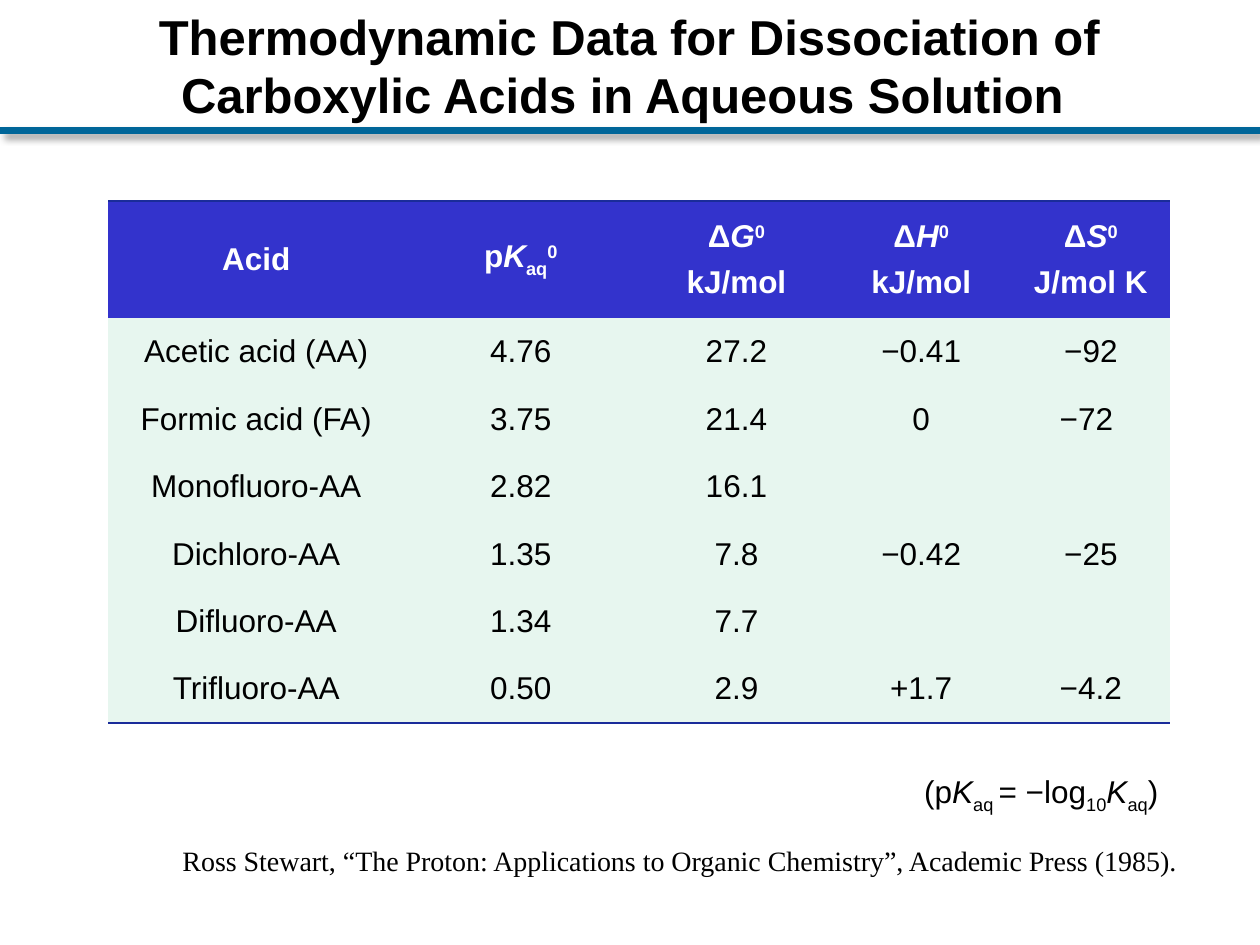
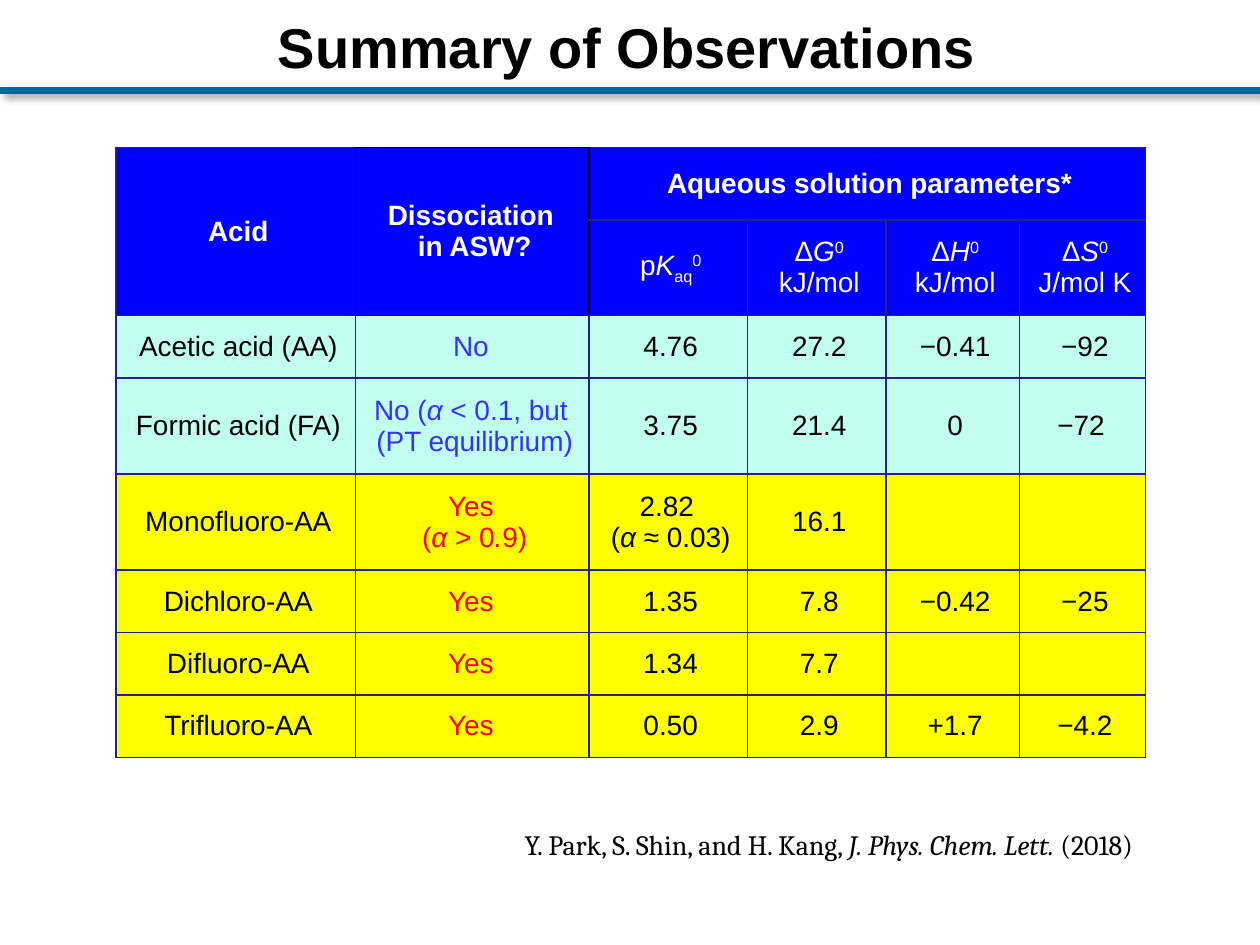
"""Builds two slides of acid dissociation tables."""
from dataclasses import dataclass

from pptx import Presentation
from pptx.dml.color import RGBColor
from pptx.enum.shapes import MSO_CONNECTOR
from pptx.enum.text import MSO_ANCHOR, PP_ALIGN
from pptx.oxml import parse_xml
from pptx.oxml.ns import nsdecls
from pptx.util import Cm, Pt

STRAIGHT = MSO_CONNECTOR.STRAIGHT
TOP, MIDDLE = MSO_ANCHOR.TOP, MSO_ANCHOR.MIDDLE
CENTER, RIGHT = PP_ALIGN.CENTER, PP_ALIGN.RIGHT


@dataclass(frozen=True)
class Theme:
    """Colours, fonts and type sizes."""
    ink: str = "000000"
    white: str = "FFFFFF"
    band: str = "006699"
    navy: str = "1A2C9A"
    indigo: str = "22228B"
    violet: str = "3333CC"
    mint: str = "E7F6EF"
    blue: str = "0000FF"
    aqua: str = "C2FFF0"
    yellow: str = "FFFF00"
    no: str = "3333FF"
    yes: str = "FF0000"
    sans: str = "Arial"
    serif: str = "Times New Roman"
    book: str = "Cambria"
    large: int = 32
    title: int = 28
    body: int = 18
    small: int = 16


theme = Theme()
BASE = {"_": "-25000", "^": "30000"}
STEPS = {"B": (1, 0), "T": (-1, 0), "R": (0, 1), "L": (0, -1)}
PLAIN = "{2D5ABB26-0587-4C30-8999-92F81FD0307C}"


def write(frame, text, size, ink=theme.ink, name=theme.sans, bold=False, align=CENTER, gap=0):
    """Write lines whose parts, split by |, may start with ~ italic, _ sub or ^ super."""
    for index, line in enumerate(text.split("\n")):
        para = frame.add_paragraph() if index else frame.paragraphs[0]
        para.alignment = align
        if index:
            para.space_before = Pt(gap)
        for part in line.split("|"):
            mark = part[0] if part[0] in "~_^" else ""
            run = para.add_run()
            run.text = part[len(mark):]
            form = {"name": name, "size": Pt(size), "bold": bold, "italic": mark == "~"}
            for key, value in form.items():
                setattr(run.font, key, value)
            run.font.color.rgb = RGBColor.from_string(ink)
            if mark in BASE:
                run.font._element.set("baseline", BASE[mark])


def label(slide, box, text, anchor=TOP, wrap=True, **form):
    """Add a text box."""
    frame = slide.shapes.add_textbox(*map(Cm, box)).text_frame
    frame.word_wrap = wrap
    frame.vertical_anchor = anchor
    write(frame, text, **form)


heads = ["p|~K|_aq|^0", "Δ|~G|^0\nkJ/mol", "Δ|~H|^0\nkJ/mol", "Δ|~S|^0\nJ/mol K"]
acids = [
    ["Acetic acid (AA)", "4.76", "27.2", "−0.41", "−92"],
    ["Formic acid (FA)", "3.75", "21.4", "0", "−72 "],
    ["Monofluoro-AA", "2.82", "16.1", "", ""],
    ["Dichloro-AA", "1.35", "7.8", "−0.42", "−25"],
    ["Difluoro-AA", "1.34", "7.7", "", ""],
    ["Trifluoro-AA", "0.50", "2.9", "+1.7", "−4.2"],
]
found = ["No ", "No (|~α| < 0.1, but \n(PT equilibrium)", "Yes \n(|~α |> 0|~.|9)",
         "Yes ", "Yes ", "Yes "]
summed = [[acid[0], state, *acid[1:]] for acid, state in zip(acids, found)]
summed[2][2] = "2.82 \n(|~α| ≈ 0.03)"

pages = [
    {
        "title": "Thermodynamic Data for Dissociation of Carboxylic Acids in Aqueous Solution ",
        "box": (0.76, 0, 23.85, 2.64), "anchor": TOP, "large": theme.title, "band": 2.64,
        "rows": [["Acid", *heads], *acids],
        "at": (2.18, 4.05), "size": theme.body, "gap": 6, "head": 1,
        "wide": [5.87, 4.8, 3.89, 3.56, 3.28], "high": [2.36] + [1.36] * 6,
        "fills": [theme.violet] + [theme.mint] * 6,
        "inks": {}, "spans": [], "dark": set(), "edge": theme.navy, "ruled": False,
        "notes": [
            ((0.51, 16.89, 23.47, 0.94),
             "Ross Stewart, “The Proton: Applications to Organic Chemistry”, Academic Press (1985).",
             {"size": theme.small, "name": theme.serif, "align": RIGHT}),
            ((18.26, 15.44, 5.46, 1.02), "(p|~K|_aq |= −log|_10|~K|_aq|)",
             {"size": theme.body, "wrap": False}),
        ],
    },
    {
        "title": "Summary of Observations ",
        "box": (2.51, 0.03, 20.57, 1.8), "anchor": MIDDLE, "large": theme.large, "band": 1.83,
        "rows": [["Acid", "Dissociation \nin ASW?", "Aqueous solution parameters*", "", "", ""],
                 ["", "", *heads], *summed],
        "at": (2.34, 2.97), "size": theme.small, "gap": 0, "head": 2,
        "wide": [4.83, 4.7, 3.2, 2.79, 2.69, 2.54],
        "high": [1.46, 1.85, 1.23, 1.85, 1.85] + [1.23] * 3,
        "fills": [theme.blue] * 2 + [theme.aqua] * 2 + [theme.yellow] * 4,
        "inks": {(row, 1): theme.no if row < 4 else theme.yes for row in range(2, 8)},
        "spans": [((0, 0), (1, 0)), ((0, 1), (1, 1)), ((0, 2), (0, 5))],
        "dark": {(0, 1), (1, 1)}, "edge": theme.indigo, "ruled": True,
        "notes": [
            ((7.52, 16.56, 15.57, 0.94),
             "Y. Park, S. Shin, and H. Kang, |~J. Phys. Chem. Lett. |(2018)",
             {"size": theme.small, "name": theme.book, "align": RIGHT}),
        ],
    },
]

deck = Presentation()
deck.slide_width, deck.slide_height = Cm(25.4), Cm(19.05)

for page in pages:
    slide = deck.slides.add_slide(deck.slide_layouts[6])
    label(slide, page["box"], page["title"], anchor=page["anchor"], size=page["large"], bold=True)

    rows, wide, high = page["rows"], page["wide"], page["high"]
    area = (*page["at"], sum(wide), sum(high))
    table = slide.shapes.add_table(len(rows), len(wide), *map(Cm, area)).table
    table.first_row = table.horz_banding = False
    table._tbl.tblPr[0].text = PLAIN
    for column, width in zip(table.columns, wide):
        column.width = Cm(width)
    for line, height in zip(table.rows, high):
        line.height = Cm(height)
    for start, end in page["spans"]:
        table.cell(*start).merge(table.cell(*end))

    for row, texts in enumerate(rows):
        for col, text in enumerate(texts):
            cell = table.cell(row, col)
            cell.fill.solid()
            cell.fill.fore_color.rgb = RGBColor.from_string(page["fills"][row])
            if text:
                form = {"vertical_anchor": MIDDLE, "margin_left": Cm(0.3), "margin_right": Cm(0.2),
                        "margin_top": Cm(0.29), "margin_bottom": Cm(0.29)}
                for key, value in form.items():
                    setattr(cell, key, value)
                ink = theme.white if row < page["head"] else theme.ink
                write(cell.text_frame, text, page["size"], page["inks"].get((row, col), ink),
                      bold=row == 0, gap=page["gap"] if row == 0 else 0)
            for side, (down, over) in STEPS.items():
                near = (row + down, col + over)
                if page["ruled"] or (down and not 0 <= near[0] < len(rows)):
                    hue = theme.ink if {(row, col), near} & page["dark"] else page["edge"]
                    cell._tc.get_or_add_tcPr().insert(0, parse_xml(
                        f'<a:ln{side} {nsdecls("a")} w="{Pt(1)}"><a:solidFill>'
                        f'<a:srgbClr val="{hue}"/></a:solidFill></a:ln{side}>'))

    for box, text, form in page["notes"]:
        label(slide, box, text, **form)

    level = Cm(page["band"])
    band = slide.shapes.add_connector(STRAIGHT, 0, level, deck.slide_width, level)
    band.line.width = Pt(4)
    band.line.color.rgb = RGBColor.from_string(theme.band)
    band._element.spPr.append(parse_xml(
        f'<a:effectLst {nsdecls("a")}><a:outerShdw blurRad="{Pt(4)}" dist="{Pt(3)}" dir="2700000" '
        f'algn="tl" rotWithShape="0"><a:srgbClr val="{theme.ink}"><a:alpha val="40000"/>'
        '</a:srgbClr></a:outerShdw></a:effectLst>'))

deck.save("out.pptx")
